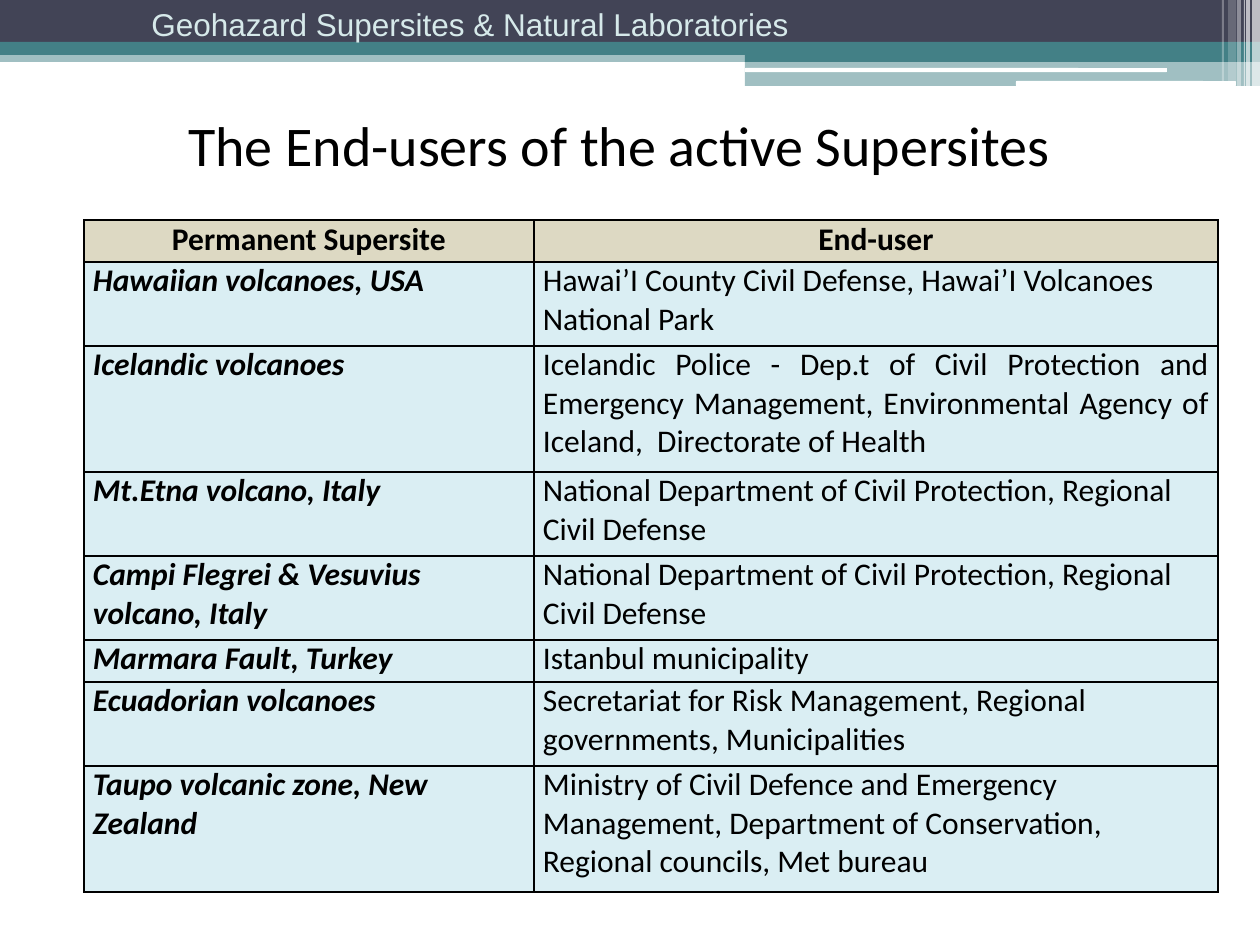
"""Build the slide listing the end-users of the active Supersites."""
from lxml import etree
from pptx import Presentation
from pptx.dml.color import RGBColor
from pptx.enum.shapes import MSO_SHAPE
from pptx.enum.text import MSO_ANCHOR, PP_ALIGN
from pptx.oxml.ns import qn
from pptx.util import Emu, Pt

RECTANGLE, ROUNDED = MSO_SHAPE.RECTANGLE, MSO_SHAPE.ROUNDED_RECTANGLE
LEFT, CENTER, JUSTIFY = PP_ALIGN.LEFT, PP_ALIGN.CENTER, PP_ALIGN.JUSTIFY
TOP = MSO_ANCHOR.TOP

COLORS = {
    "navy": "424456", "teal": "438086", "white": "FFFFFF", "black": "000000",
    "banner": "D6E9EA", "heading": "DDD9C3", "body": "DAEEF3",
}
BANNER = "Geohazard Supersites & Natural Laboratories"
TITLE = "The End-users of the active Supersites"
HEADINGS = ("Permanent Supersite", "End-user")
CIVIL_ITALY = "National Department of Civil Protection, Regional Civil Defense"
SITES = [
    ("Hawaiian volcanoes, USA",
     "Hawai’I County Civil Defense, Hawai’I Volcanoes National Park", 2, LEFT),
    ("Icelandic volcanoes",
     "Icelandic Police - Dep.t of Civil Protection and Emergency Management, "
     "Environmental Agency of Iceland,  Directorate of Health", 3, JUSTIFY),
    ("Mt.Etna volcano, Italy", CIVIL_ITALY, 2, LEFT),
    ("Campi Flegrei & Vesuvius volcano, Italy", CIVIL_ITALY, 2, LEFT),
    ("Marmara Fault, Turkey", "Istanbul municipality", 1, LEFT),
    ("Ecuadorian volcanoes",
     "Secretariat for Risk Management, Regional governments, Municipalities", 2, LEFT),
    ("Taupo volcanic zone, New Zealand",
     "Ministry of Civil Defence and Emergency Management, Department of Conservation, "
     "Regional councils, Met bureau", 3, LEFT),
]
BANDS = [
    (RECTANGLE, (0, 50, 1260, 12), "teal", 50),
    (RECTANGLE, (0, 0, 1260, 43), "navy", 100),
    (RECTANGLE, (0, 42, 1260, 13), "teal", 100),
    (RECTANGLE, (745, 49, 515, 13), "teal", 100),
    (RECTANGLE, (745, 61, 515, 25), "teal", 50),
    (ROUNDED, (745, 68, 422, 4), "white", 100),
    (ROUNDED, (1016, 81, 220, 5), "white", 100),
]
STRIPES = [
    (1252, 8, 86, 65), (1246, 4, 86, 65), (1244, 1, 86, 60),
    (1237, 4, 86, 40), (1228, 8, 81, 20), (1222, 2, 81, 30),
]
COLUMNS = (450, 684)
TABLE_LEFT, TABLE_TOP, LINE_HEIGHT, CELL_MARGIN = 84, 220, 42, 9


def px(value):
    return Emu(round(value * 914400 / 126))


def color(name):
    return RGBColor.from_string(COLORS[name])


def add_band(slide, kind, box, fill, opacity):
    shape = slide.shapes.add_shape(kind, *map(px, box))
    shape.shadow.inherit = False
    shape.line.fill.background()
    shape.fill.solid()
    shape.fill.fore_color.rgb = color(fill)
    if opacity < 100:
        target = shape.fill._xPr.find(".//" + qn("a:srgbClr"))
        etree.SubElement(target, qn("a:alpha"), val=str(opacity * 1000))


def write(frame, text, fill, alignment=LEFT, space=0, **font):
    paragraph = frame.paragraphs[0]
    paragraph.alignment = alignment
    paragraph.space_before = Pt(space)
    run = paragraph.add_run()
    run.text = text
    run.font.color.rgb = color(fill)
    for name, value in font.items():
        setattr(run.font, name, value)


def add_text(slide, box, text, wrap, margins, *style, **font):
    frame = slide.shapes.add_textbox(*map(px, box)).text_frame
    frame.word_wrap = wrap
    frame.vertical_anchor = TOP
    for name, value in margins.items():
        setattr(frame, name, px(value))
    write(frame, text, *style, **font)


def format_cell(cell, text, fill, alignment, **font):
    margins = {"margin_left": CELL_MARGIN, "margin_right": CELL_MARGIN,
               "margin_top": 0, "margin_bottom": 0}
    for name, value in margins.items():
        setattr(cell, name, px(value))
    properties = cell._tc.get_or_add_tcPr()
    for side in ("a:lnL", "a:lnR", "a:lnT", "a:lnB"):
        line = etree.SubElement(properties, qn(side), w=str(Pt(1)))
        solid = etree.SubElement(line, qn("a:solidFill"))
        etree.SubElement(solid, qn("a:srgbClr"), val=COLORS["black"])
    cell.fill.solid()
    cell.fill.fore_color.rgb = color(fill)
    write(cell.text_frame, text, "black", alignment,
          size=Pt(18), name="Calibri", **font)


def add_sites_table(slide):
    lines = [1] + [site[2] for site in SITES]
    frame = slide.shapes.add_table(
        len(lines), len(COLUMNS), px(TABLE_LEFT), px(TABLE_TOP),
        px(sum(COLUMNS)), px(sum(lines) * LINE_HEIGHT))
    table = frame.table
    for column, width in zip(table.columns, COLUMNS):
        column.width = px(width)
    for row, count in zip(table.rows, lines):
        row.height = px(count * LINE_HEIGHT)
    for index, heading in enumerate(HEADINGS):
        format_cell(table.cell(0, index), heading, "heading", CENTER, bold=True, italic=False)
    for index, (site, users, _, alignment) in enumerate(SITES, 1):
        format_cell(table.cell(index, 0), site, "body", LEFT, bold=True, italic=True)
        format_cell(table.cell(index, 1), users, "body", alignment, bold=False, italic=False)
    for cell in table.iter_cells():
        cell.text_frame.paragraphs[0].space_before = Pt(3)


def main():
    presentation = Presentation()
    presentation.slide_width, presentation.slide_height = px(1260), px(945)
    slide = presentation.slides.add_slide(presentation.slide_layouts[6])
    for band in BANDS:
        add_band(slide, *band)
    for left, width, height, opacity in STRIPES:
        add_band(slide, RECTANGLE, (left, 0, width, height), "white", opacity)
    add_text(slide, (139, -1, 684, 50), BANNER, False, {}, "banner",
             size=Pt(18), name="Arial")
    add_text(slide, (84, 111, 1071, 126), TITLE, True, {"margin_top": 0}, "black", CENTER,
             size=Pt(32), name="Calibri")
    add_sites_table(slide)
    presentation.save("out.pptx")


if __name__ == "__main__":
    main()
